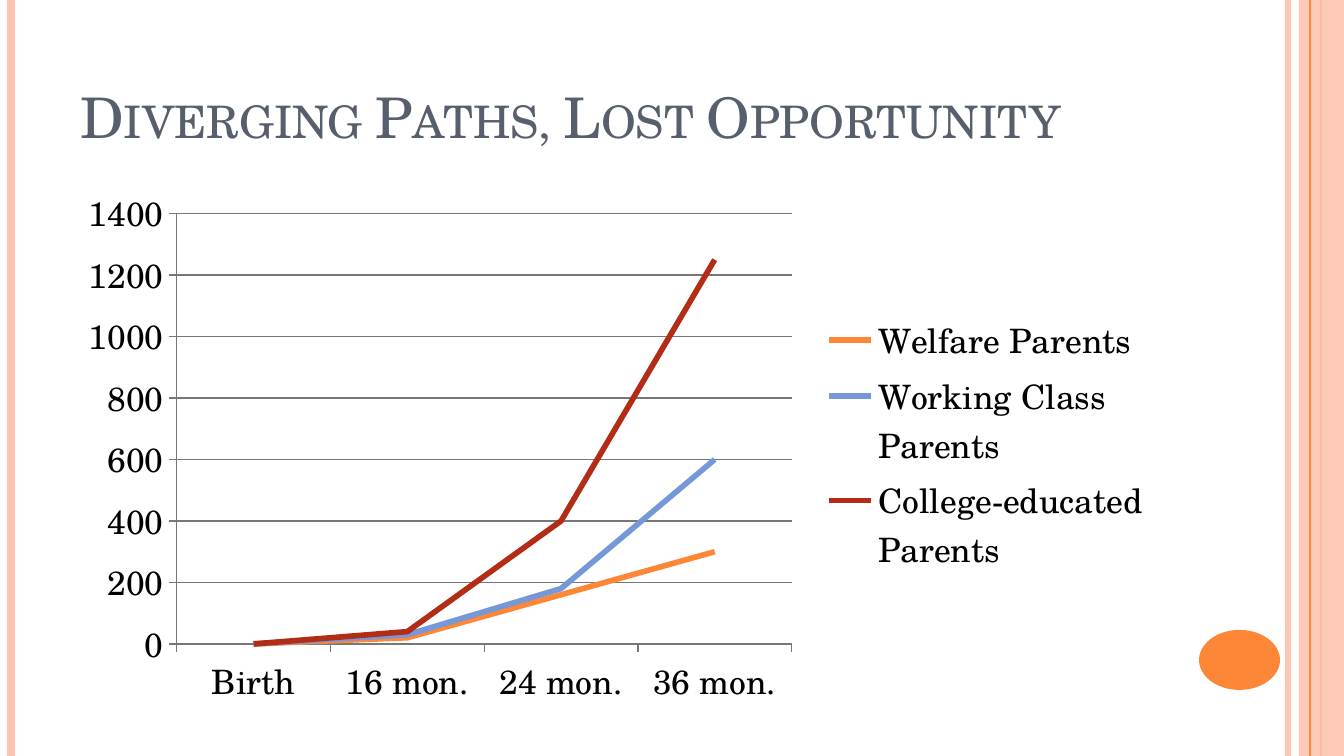
from dataclasses import dataclass

from lxml import etree
from pptx import Presentation
from pptx import util as u
from pptx.chart import data as cd
from pptx.dml.color import RGBColor
from pptx.enum import chart as ec
from pptx.enum import shapes, text
from pptx.oxml import ns

WIDE, HIGH = 1344, 756


@dataclass(frozen=True)
class Theme:
    face: str = "TeX Gyre Schola"
    head: int = 30
    label: int = 18
    ink: str = "000000"
    slate: str = "575F6D"
    grid: str = "777777"
    peach: str = "FEC3AE"
    orange: str = "FE8637"
    blue: str = "7598D9"
    red: str = "B32C16"


THEME = Theme()


def px(n):
    return u.Emu(round(n * 914400 / 134.4))


def rgb(code):
    return RGBColor.from_string(code)


def sub(node, tag, **attrs):
    item = etree.SubElement(node, ns.qn(tag))
    for key, val in attrs.items():
        item.set(key, str(val))
    return item


def fade(shape, alpha):
    for node in shape.element.spPr.iter(ns.qn("a:srgbClr")):
        sub(node, "a:alpha", val=alpha * 1000)


def style(font, size, color):
    font.name = THEME.face
    font.size = u.Pt(size)
    font.color.rgb = rgb(color)


def write(shape, words, size=THEME.label, color=THEME.ink, small=False,
          anchor=text.MSO_ANCHOR.TOP):
    frame = shape.text_frame
    frame.word_wrap = True
    frame.auto_size = text.MSO_AUTO_SIZE.NONE
    frame.vertical_anchor = anchor
    para = frame.paragraphs[0]
    para.alignment = text.PP_ALIGN.LEFT
    run = para.add_run()
    run.text = words
    style(run.font, size, color)
    if small:
        run.font._element.set("cap", "small")


def place(shape, left, top, width, height):
    shape.left, shape.top = px(left), px(top)
    shape.width, shape.height = px(width), px(height)


def stripe(slide, x, color, weight, alpha=100):
    line = slide.shapes.add_connector(
        shapes.MSO_CONNECTOR.STRAIGHT, px(x), 0, px(x), px(HIGH))
    line.line.color.rgb = rgb(color)
    line.line.width = u.Pt(weight)
    if alpha < 100:
        fade(line, alpha)
    sub(line.element.spPr, "a:effectLst")


def block(slide, kind, box, color, alpha=100):
    shape = slide.shapes.add_shape(kind, *map(px, box))
    shape.shadow.inherit = False
    shape.fill.solid()
    shape.fill.fore_color.rgb = rgb(color)
    shape.line.fill.background()
    if alpha < 100:
        fade(shape, alpha)


def rule(line, color, weight):
    line.color.rgb = rgb(color)
    line.width = u.Pt(weight)


def layout(plot, **parts):
    area = plot.find(ns.qn("c:layout"))
    if area is None:
        area = etree.Element(ns.qn("c:layout"))
        plot.insert(0, area)
    hand = sub(area, "c:manualLayout")
    sub(hand, "c:layoutTarget", val="inner")
    sub(hand, "c:xMode", val="edge")
    sub(hand, "c:yMode", val="edge")
    for key, val in parts.items():
        sub(hand, f"c:{key}", val=val)


def graph(slide, box, cats, rows):
    data = cd.CategoryChartData()
    data.categories = cats
    for name, vals, _ in rows:
        data.add_series(name, vals)
    chart = slide.shapes.add_chart(
        ec.XL_CHART_TYPE.LINE, *map(px, box), data).chart
    style(chart.font, THEME.label, THEME.ink)
    chart.has_title = False
    chart.has_legend = True
    chart.legend.position = ec.XL_LEGEND_POSITION.RIGHT
    chart.legend.include_in_layout = False
    plot = chart.plots[0]
    plot.vary_by_categories = False
    for line, (_, _, color) in zip(plot.series, rows):
        line.smooth = False
        line.marker.style = ec.XL_MARKER_STYLE.NONE
        rule(line.format.line, color, 3)
    for axis in (chart.category_axis, chart.value_axis):
        axis.major_tick_mark = ec.XL_TICK_MARK.OUTSIDE
        rule(axis.format.line, THEME.grid, 0.75)
    scale = chart.value_axis
    scale.minimum_scale, scale.maximum_scale = 0, 1400
    scale.major_unit = 200
    scale.has_major_gridlines = True
    rule(scale.major_gridlines.format.line, THEME.grid, 0.75)
    layout(chart.element.chart.plotArea, x=0.1, y=0.07, w=0.56, h=0.8)


def frame(slide):
    stripe(slide, 1288, THEME.peach, 3, alpha=93)
    stripe(slide, 11, THEME.peach, 4.5)
    stripe(slide, 1321, THEME.orange, 1.5)
    block(slide, shapes.MSO_SHAPE.RECTANGLE, (1299, 0, WIDE - 1299, HIGH),
          THEME.peach, alpha=87)
    stripe(slide, 1310, THEME.orange, 0.75)
    block(slide, shapes.MSO_SHAPE.OVAL, (1199, 630, 81, 60), THEME.orange)


def main():
    deck = Presentation()
    deck.slide_width, deck.slide_height = px(WIDE), px(HIGH)
    slide = deck.slides.add_slide(deck.slide_layouts[5])
    frame(slide)
    title = slide.shapes.title
    place(title, 67, 31, 1098, 126)
    write(title, "Diverging Paths, Lost Opportunity", size=THEME.head,
          color=THEME.slate, small=True, anchor=text.MSO_ANCHOR.BOTTOM)
    graph(slide, (67, 176, 1098, 538),
          ("Birth", "16 mon.", "24 mon.", "36 mon."),
          (("Welfare Parents", (0, 20, 160, 300), THEME.orange),
           ("Working Class Parents", (0, 30, 180, 600), THEME.blue),
           ("College-educated Parents", (0, 40, 400, 1250), THEME.red)))
    deck.save("out.pptx")


if __name__ == "__main__":
    main()
